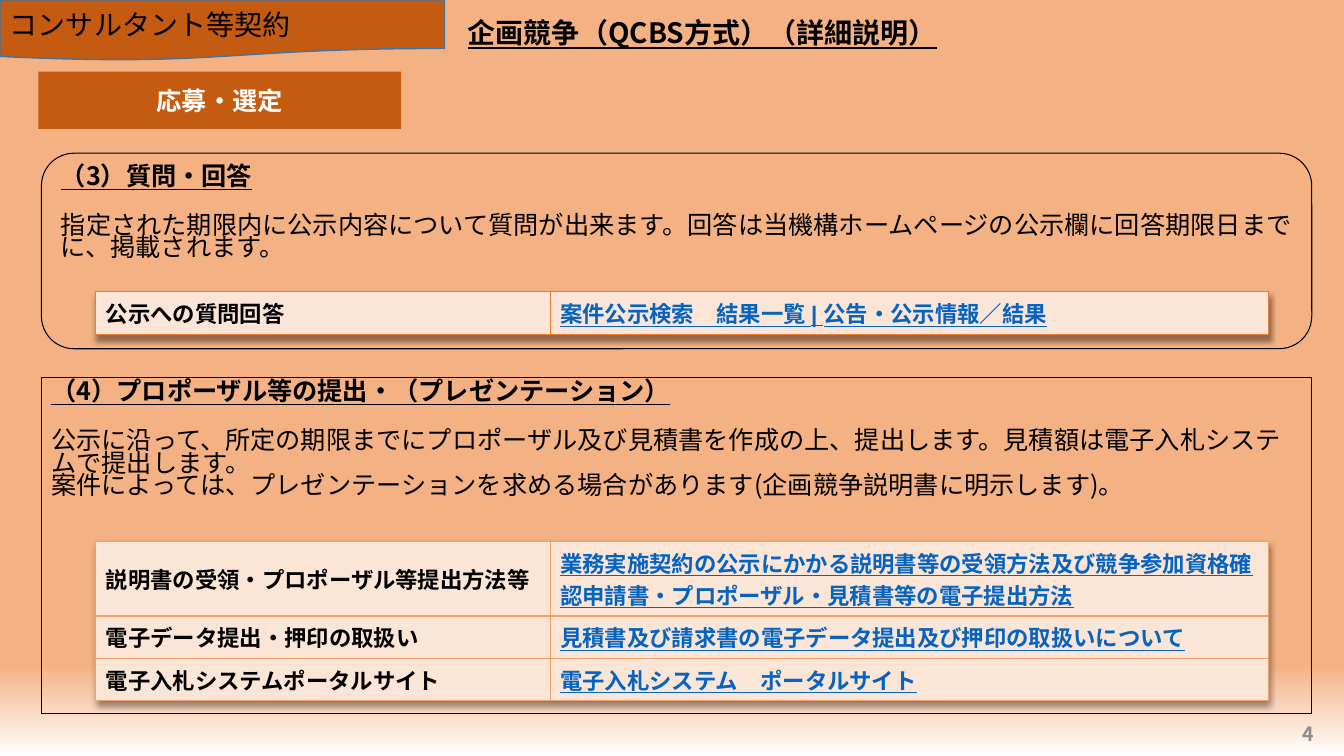
from dataclasses import dataclass

from pptx import Presentation
from pptx.dml.color import RGBColor
from pptx.enum.shapes import MSO_SHAPE
from pptx.enum.text import MSO_ANCHOR, PP_ALIGN
from pptx.oxml import parse_xml
from pptx.oxml.ns import nsdecls, qn
from pptx.util import Inches, Pt


@dataclass(frozen=True)
class Theme:
    font: str = "Noto Sans CJK JP"
    latin_table_font: str = "Arial"
    ink: str = "000000"
    white: str = "FFFFFF"
    accent: str = "C55A11"
    banner_line: str = "43739E"
    link: str = "0563C1"
    cell: str = "FBE5D6"
    question_border: str = "ED7D31"
    proposal_border: str = "F1A069"
    number: str = "8C8C8C"
    heading_size: int = 20
    body_size: int = 18
    table_size: int = 16
    number_size: int = 14
    tight: float = 0.74
    backdrop: tuple = ((88, "F4B183"), (92, "F8CBAD"), (96, "FBE5D6"), (100, "FFFFFF"))


THEME = Theme()
WIDTH, HEIGHT = Inches(13.33), Inches(7.5)
TABLE_LEFT = 7.13
TABLE_COLUMNS = (33.8, 53.45)
LINE_ROW, DOUBLE_ROW = 5.6, 9.75


def across(share):
    return int(WIDTH * share / 100)


def down(share):
    return int(HEIGHT * share / 100)


def place(left, top, width, height):
    return across(left), down(top), across(width), down(height)


def style_para(para, size, color=THEME.ink, bold=False, underline=False,
               align=PP_ALIGN.LEFT, font=THEME.font):
    para.alignment = align
    for span in para.runs:
        span.font.size = Pt(size)
        span.font.bold = bold
        span.font.underline = underline
        span.font.name = font
        span.font.color.rgb = RGBColor.from_string(color)
        east_asian = span.font._element.makeelement(qn("a:ea"), {"typeface": THEME.font})
        span.font._element.find(qn("a:latin")).addnext(east_asian)


def write_line(box, text, size, anchor=MSO_ANCHOR.MIDDLE, **style):
    frame = box.text_frame
    frame.word_wrap = True
    frame.vertical_anchor = anchor
    frame.text = text
    style_para(frame.paragraphs[0], size, **style)


def set_backdrop(page):
    stops = "".join(
        f'<a:gs pos="{share * 1000}"><a:srgbClr val="{color}"/></a:gs>'
        for share, color in THEME.backdrop
    )
    page.element.cSld.insert(0, parse_xml(
        f'<p:bg {nsdecls("p", "a")}><p:bgPr><a:gradFill rotWithShape="1">'
        f'<a:gsLst>{stops}</a:gsLst><a:lin ang="5400000" scaled="0"/></a:gradFill>'
        f'<a:effectLst/></p:bgPr></p:bg>'
    ))


def set_title(page, area, text):
    title = page.shapes.title
    title.left, title.top, title.width, title.height = area
    write_line(title, text, THEME.heading_size, bold=True, underline=True)


def add_box(page, preset, area, fill=None, line=None, line_width=1.0):
    box = page.shapes.add_shape(preset, *area)
    box.shadow.inherit = False
    if fill:
        box.fill.solid()
        box.fill.fore_color.rgb = RGBColor.from_string(fill)
    else:
        box.fill.background()
    if line:
        box.line.color.rgb = RGBColor.from_string(line)
        box.line.width = Pt(line_width)
    else:
        box.line.fill.background()
    return box


def add_panel(page, preset, area, heading, *body):
    box = add_box(page, preset, area, line=THEME.ink, line_width=0.75)
    frame = box.text_frame
    frame.word_wrap = True
    frame.vertical_anchor = MSO_ANCHOR.TOP
    frame.text = "\n".join((heading, *body))
    for index, para in enumerate(frame.paragraphs):
        is_heading = index == 0
        para.line_spacing = THEME.tight
        para.space_after = Pt(19 if is_heading else 0)
        style_para(para, THEME.body_size, bold=is_heading, underline=is_heading)


def border_cell(cell, color):
    properties = cell._tc.get_or_add_tcPr()
    for index, side in enumerate(("lnL", "lnR", "lnT", "lnB")):
        properties.insert(index, parse_xml(
            f'<a:{side} {nsdecls("a")} w="12700"><a:solidFill>'
            f'<a:srgbClr val="{color}"/></a:solidFill></a:{side}>'
        ))


def add_link_table(page, top, heights, rows, border):
    area = place(TABLE_LEFT, top, sum(TABLE_COLUMNS), sum(heights))
    table = page.shapes.add_table(len(rows), len(TABLE_COLUMNS), *area).table
    table.first_row = table.horz_banding = False
    table._tbl.tblPr.insert(0, parse_xml(
        f'<a:effectLst {nsdecls("a")}><a:outerShdw blurRad="50800" dist="38100" '
        f'dir="5400000" algn="t" rotWithShape="0"><a:srgbClr val="{THEME.ink}">'
        f'<a:alpha val="40000"/></a:srgbClr></a:outerShdw></a:effectLst>'
    ))
    for column, share in zip(table.columns, TABLE_COLUMNS):
        column.width = across(share)
    for row, share, (texts, font) in zip(table.rows, heights, rows):
        row.height = down(share)
        for cell, text, color in zip(row.cells, texts, (THEME.ink, THEME.link)):
            cell.fill.solid()
            cell.fill.fore_color.rgb = RGBColor.from_string(THEME.cell)
            cell.vertical_anchor = MSO_ANCHOR.MIDDLE
            cell.text_frame.text = text
            style_para(cell.text_frame.paragraphs[0], THEME.table_size, color=color,
                       bold=True, underline=color == THEME.link, font=font)
            border_cell(cell, border)


def main():
    deck = Presentation()
    deck.slide_width, deck.slide_height = WIDTH, HEIGHT
    page = deck.slides.add_slide(deck.slide_layouts[5])
    set_backdrop(page)
    set_title(page, place(34.06, 0, 45.16, 8.67), "企画競争（QCBS方式）（詳細説明）")

    banner = add_box(page, MSO_SHAPE.FLOWCHART_DOCUMENT, place(0, 0, 33.08, 8),
                     THEME.accent, THEME.banner_line)
    write_line(banner, "コンサルタント等契約", THEME.heading_size)
    stage = add_box(page, MSO_SHAPE.RECTANGLE, place(2.85, 9.47, 27, 7.6), THEME.accent)
    write_line(stage, "応募・選定", THEME.body_size, color=THEME.white, bold=True,
               align=PP_ALIGN.CENTER)

    add_panel(
        page, MSO_SHAPE.ROUNDED_RECTANGLE, place(3.08, 20.27, 94.52, 25.87),
        "（3）質問・回答",
        "指定された期限内に公示内容について質問が出来ます。回答は当機構ホームページの公示欄に回答期限日までに、掲載されます。",
    )
    add_link_table(page, 38.6, (LINE_ROW,), (
        (("公示への質問回答", "案件公示検索　結果一覧 | 公告・公示情報／結果"), THEME.latin_table_font),
    ), THEME.question_border)

    add_panel(
        page, MSO_SHAPE.RECTANGLE, place(3.08, 50, 94.52, 44.4),
        "（4）プロポーザル等の提出・（プレゼンテーション）",
        "公示に沿って、所定の期限までにプロポーザル及び見積書を作成の上、提出します。見積額は電子入札システムで提出します。",
        "案件によっては、プレゼンテーションを求める場合があります(企画競争説明書に明示します)。",
    )
    add_link_table(page, 71.6, (DOUBLE_ROW, LINE_ROW, LINE_ROW), (
        (("説明書の受領・プロポーザル等提出方法等",
          "業務実施契約の公示にかかる説明書等の受領方法及び競争参加資格確認申請書・プロポーザル・見積書等の電子提出方法"),
         THEME.font),
        (("電子データ提出・押印の取扱い", "見積書及び請求書の電子データ提出及び押印の取扱いについて"), THEME.font),
        (("電子入札システムポータルサイト", "電子入札システム　ポータルサイト"), THEME.font),
    ), THEME.proposal_border)

    number = page.shapes.add_textbox(*place(76, 94.4, 22.5, 5.33))
    write_line(number, "4", THEME.number_size, color=THEME.number, bold=True,
               align=PP_ALIGN.RIGHT)
    deck.save("out.pptx")


if __name__ == "__main__":
    main()
